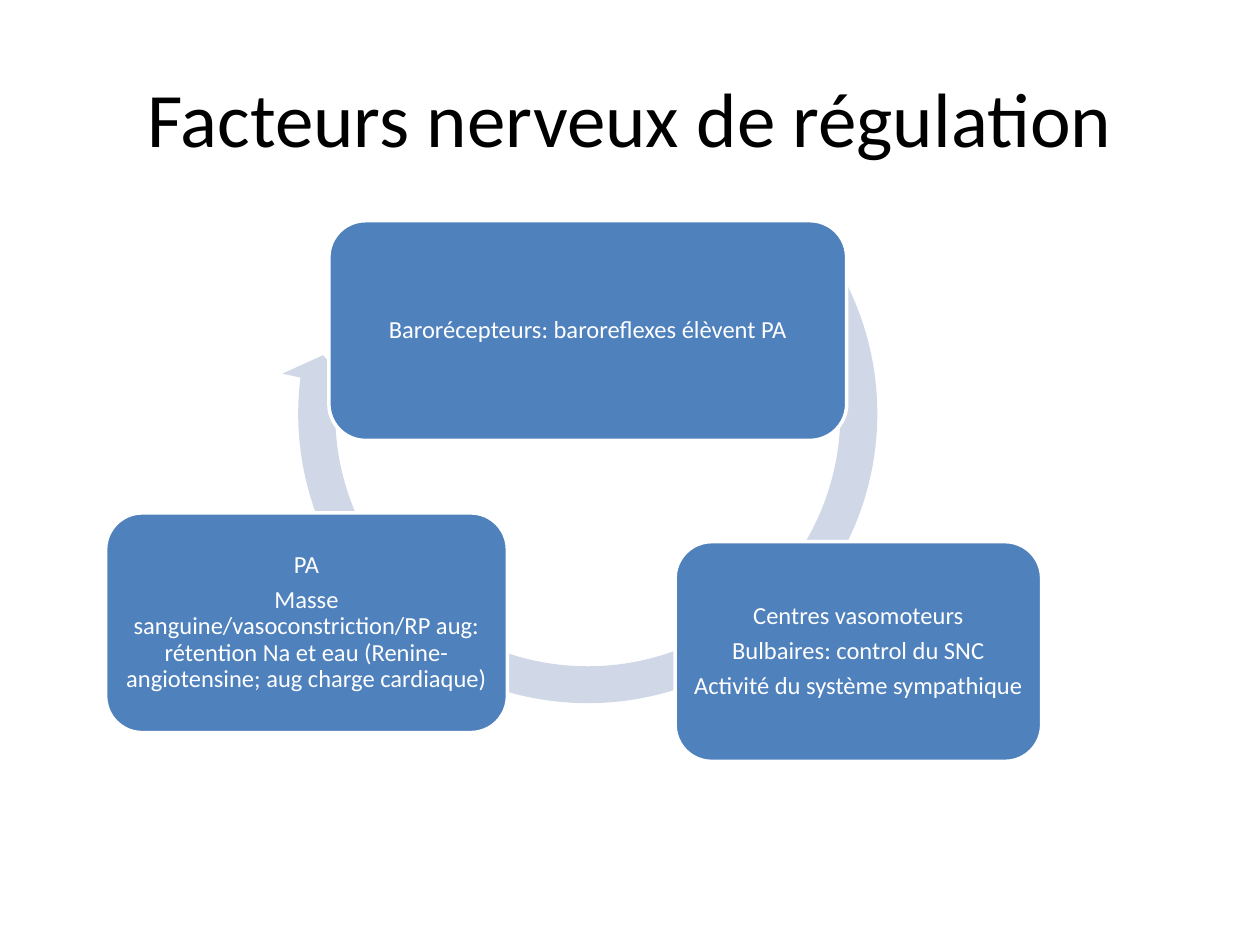
from pptx import Presentation
from pptx.dml.color import RGBColor
from pptx.enum.shapes import MSO_SHAPE as Shape
from pptx.enum.text import MSO_ANCHOR as Anchor, PP_ALIGN as Align
from pptx.util import Cm, Pt

TITLE = "Facteurs nerveux de régulation"
STEP_HEIGHT = 4.43
# left, top, width (cm), paragraphs
STEPS = [
    (6.63, 4.45, 10.44, ["Barorécepteurs: baroreflexes élèvent PA"]),
    (13.61, 10.92, 7.39, ["Centres vasomoteurs",
                          "Bulbaires: control du SNC",
                          "Activité du système sympathique"]),
    (2.13, 10.34, 8.1, ["PA",
                        "Masse sanguine/vasoconstriction/RP aug: rétention Na "
                        "et eau (Renine-angiotensine; aug charge cardiaque)"]),
]
CYCLE_BOX = (5.64, 2.13, 12.42, 12.42)
# thickness, head angle, end angle, start angle, head width
CYCLE_ADJUSTMENTS = (0.06, 3.4, 112.07, 192.17, 0.06)
BLUE, PALE_BLUE, WHITE, BLACK = "4F81BD", "D0D8E8", "FFFFFF", "000000"


def color(hex_value):
    return RGBColor.from_string(hex_value)


def add_filled(slide, kind, box, fill):
    shape = slide.shapes.add_shape(kind, *map(Cm, box))
    shape.shadow.inherit = False
    shape.fill.solid()
    shape.fill.fore_color.rgb = color(fill)
    shape.line.fill.background()
    return shape


def write(shape, lines, size, hex_value):
    """Fill the shape with centred paragraphs in one style."""
    frame = shape.text_frame
    frame.word_wrap = True
    frame.vertical_anchor = Anchor.MIDDLE
    frame.text = "\n".join(lines)
    for paragraph in frame.paragraphs:
        paragraph.alignment = Align.CENTER
        for run in paragraph.runs:
            run.font.name = "Calibri"
            run.font.size = Pt(size)
            run.font.color.rgb = color(hex_value)
    return frame


def add_step(slide, left, top, width, lines):
    shape = add_filled(slide, Shape.ROUNDED_RECTANGLE,
                       (left, top, width, STEP_HEIGHT), BLUE)
    shape.line.color.rgb = color(WHITE)
    shape.line.width = Pt(2)
    frame = write(shape, lines, 14, WHITE)
    frame.margin_left = frame.margin_right = Cm(0.15)
    frame.margin_top = frame.margin_bottom = Cm(0.15)
    for paragraph in frame.paragraphs:
        paragraph.line_spacing = 0.9
        paragraph.space_after = Pt(4.9)


def main():
    presentation = Presentation()
    presentation.slide_width, presentation.slide_height = Cm(25.4), Cm(19.05)
    slide = presentation.slides.add_slide(presentation.slide_layouts[6])

    title = slide.shapes.add_textbox(Cm(1.27), Cm(0.76), Cm(22.86), Cm(3.18))
    write(title, [TITLE], 44, BLACK)

    cycle = add_filled(slide, Shape.CIRCULAR_ARROW, CYCLE_BOX, PALE_BLUE)
    for index, value in enumerate(CYCLE_ADJUSTMENTS):
        cycle.adjustments[index] = value
    for step in STEPS:
        add_step(slide, *step)

    presentation.save("out.pptx")


if __name__ == "__main__":
    main()
